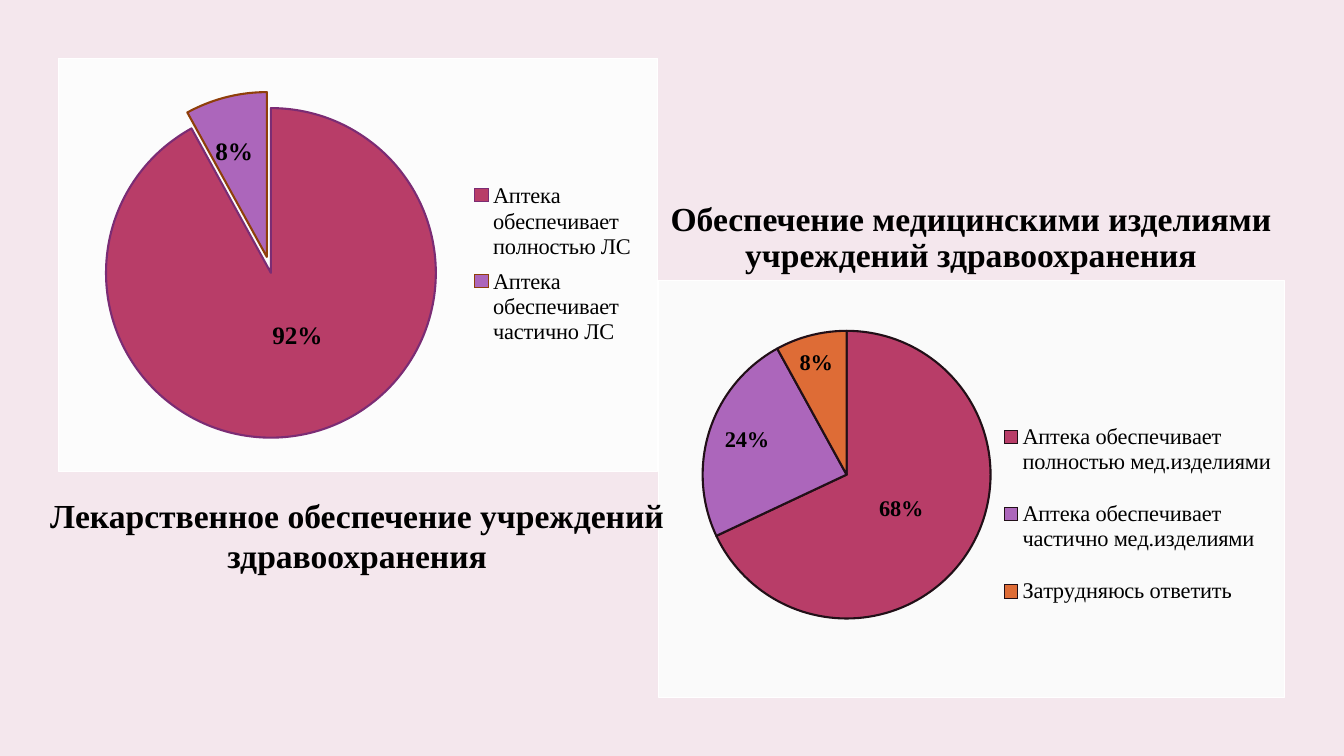
"""Builds a slide with two pie charts on pharmacy supply and their captions."""
from lxml.etree import SubElement
from pptx import Presentation
from pptx.chart.data import CategoryChartData
from pptx.dml.color import RGBColor
from pptx.enum.chart import XL_CHART_TYPE, XL_LABEL_POSITION, XL_LEGEND_POSITION
from pptx.enum.text import MSO_ANCHOR, PP_ALIGN
from pptx.oxml import parse_xml
from pptx.oxml.ns import nsdecls, qn
from pptx.util import Cm, Pt

COLORS = {
    "page": "F4E7ED", "text": "000000", "border": "FFFFFF",
    "left_panel": "FCFCFC", "right_panel": "FAFAFA",
    "rose": "B83D68", "violet": "AC66BB", "orange": "DE6C36",
    "plum": "7B2C74", "brown": "8F3F0A", "dark": "210F17",
}
SLICES = ("rose", "violet", "orange")


def color(name):
    return RGBColor.from_string(COLORS[name])


def style_text(font, size, bold=False):
    font.name, font.size, font.bold = "Times New Roman", Pt(size), bold
    font.color.rgb = color("text")


def make_layout(inner=False, **fractions):
    layout = parse_xml(f"<c:layout {nsdecls('c')}><c:manualLayout/></c:layout>")
    values = {"layoutTarget": "inner"} if inner else {}
    if "w" in fractions:
        values.update(xMode="edge", yMode="edge")
    values.update(fractions)
    for tag, value in values.items():
        SubElement(layout[0], qn(f"c:{tag}")).set("val", str(value))
    return layout


class SlideBuilder:
    def __init__(self, deck):
        self.page = deck.slides.add_slide(deck.slide_layouts[6])
        self.page.background.fill.solid()
        self.page.background.fill.fore_color.rgb = color("page")

    def caption(self, text, left, top, width, height, line=None):
        box = self.page.shapes.add_textbox(Cm(left), Cm(top), Cm(width), Cm(height))
        box.text_frame.word_wrap = True
        box.text_frame.vertical_anchor = MSO_ANCHOR.TOP
        para = box.text_frame.paragraphs[0]
        para.alignment = PP_ALIGN.CENTER
        if line:
            para.line_spacing = Pt(line)
        span = para.add_run()
        span.text = text
        style_text(span.font, 24, bold=True)

    def pie(self, shares, left, top, width, height, panel, outlines, outline_width,
            label_size, shifts, plot, legend, explosion=0):
        data = CategoryChartData()
        data.categories = list(shares)
        data.add_series("Series 1", list(shares.values()))
        chart = self.page.shapes.add_chart(
            XL_CHART_TYPE.PIE, Cm(left), Cm(top), Cm(width), Cm(height), data).chart
        chart.has_title = False
        style_text(chart.font, 10)
        chart.plots[0].vary_by_categories = True
        self.panel(chart, panel)
        self.legend(chart, legend)
        self.place_plot(chart, plot)
        points = chart.plots[0].series[0].points
        for index, (fill, outline) in enumerate(zip(SLICES, outlines)):
            point = points[index]
            point.format.fill.solid()
            point.format.fill.fore_color.rgb = color(fill)
            point.format.line.color.rgb = color(outline)
            point.format.line.width = Pt(outline_width)
            style_text(point.data_label.font, label_size, bold=True)
            point.data_label.position = XL_LABEL_POSITION.CENTER
        for label, (x, y) in zip(chart.element.iter(qn("c:dLbl")), shifts):
            label.find(qn("c:idx")).addnext(make_layout(x=x, y=y))
            label.find(qn("c:showVal")).set("val", "0")
            label.find(qn("c:showPercent")).set("val", "1")
        if explosion:
            last = list(chart.element.iter(qn("c:dPt")))[-1]
            last.find(qn("c:spPr")).addprevious(
                parse_xml(f'<c:explosion {nsdecls("c")} val="{explosion}"/>'))

    def panel(self, chart, fill):
        chart.element.find(qn("c:chart")).addnext(parse_xml(
            f'<c:spPr {nsdecls("c", "a")}><a:solidFill><a:srgbClr val="{COLORS[fill]}"/>'
            f'</a:solidFill><a:ln w="{Pt(0.75)}"><a:solidFill>'
            f'<a:srgbClr val="{COLORS["border"]}"/></a:solidFill></a:ln></c:spPr>'))

    def legend(self, chart, frame):
        chart.has_legend = True
        chart.legend.position = XL_LEGEND_POSITION.RIGHT
        chart.legend.include_in_layout = False
        style_text(chart.legend.font, 16)
        self.replace_layout(chart.element.find(".//" + qn("c:legend")), 1, frame)

    def place_plot(self, chart, frame):
        area = chart.element.find(".//" + qn("c:plotArea"))
        self.replace_layout(area, 0, frame, inner=True)

    def replace_layout(self, parent, place, frame, inner=False):
        former = parent.find(qn("c:layout"))
        if former is not None:
            parent.remove(former)
        parent.insert(place, make_layout(inner, **dict(zip("xywh", frame))))


def main():
    deck = Presentation()
    deck.slide_width, deck.slide_height = Cm(33.87), Cm(19.05)
    slide = SlideBuilder(deck)
    slide.pie(
        {"Аптека обеспечивает полностью ЛС": 92, "Аптека обеспечивает частично ЛС": 8},
        1.45, 1.45, 15.14, 10.44, "left_panel", ("plum", "brown"), 1.5, 18,
        shifts=((0.01, -0.04), (-0.02, -0.06)), plot=(0.08, 0.12, 0.55, 0.8),
        legend=(0.67, 0.28, 0.31, 0.44), explosion=10)
    slide.pie(
        {"Аптека обеспечивает полностью мед.изделиями": 68,
         "Аптека обеспечивает частично мед.изделиями": 24,
         "Затрудняюсь ответить": 8},
        16.59, 7.06, 15.8, 10.54, "right_panel", ("dark",) * 3, 1.5, 16,
        shifts=((-0.01, -0.01), (-0.05, -0.03), (-0.02, -0.1)),
        plot=(0.07, 0.12, 0.46, 0.69), legend=(0.55, 0.28, 0.43, 0.56))
    slide.caption("Лекарственное обеспечение учреждений здравоохранения",
                  0.81, 12.34, 16.38, 2.31)
    slide.caption("Обеспечение медицинскими изделиями учреждений здравоохранения",
                  16, 4.95, 16.94, 2.11, line=26)
    deck.save("out.pptx")


if __name__ == "__main__":
    main()
